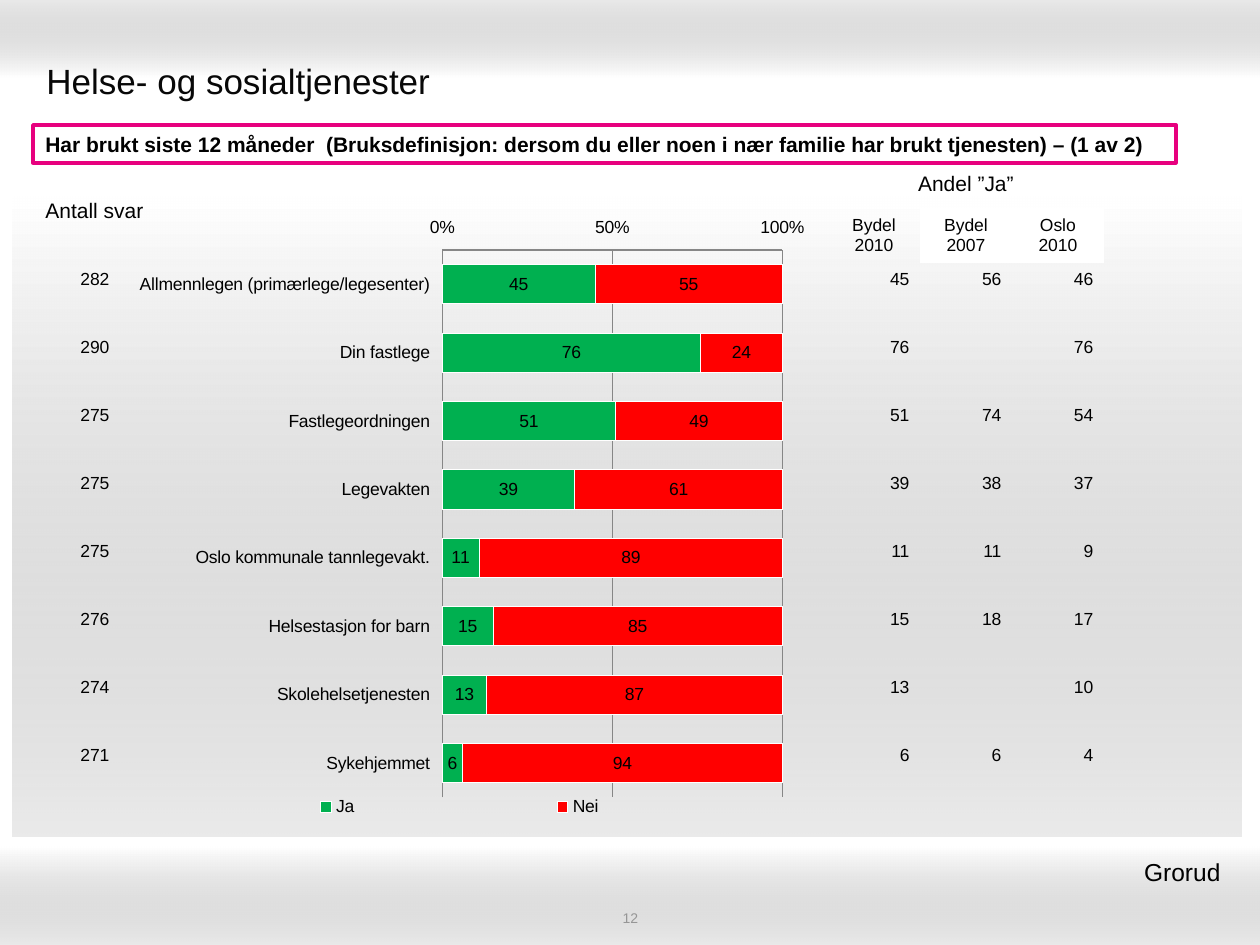
from lxml import etree
from pptx import Presentation
from pptx import util as u
from pptx.chart.data import CategoryChartData
from pptx.dml.color import RGBColor
from pptx.enum import chart as ch
from pptx.enum import shapes, text
from pptx.oxml import parse_xml
from pptx.oxml.ns import nsdecls, qn

PX_PER_INCH = 126
NO_TABLE_STYLE = "{2D5ABB26-0587-4C30-8999-92F81FD0307C}"
LEFT, CENTER, RIGHT = text.PP_ALIGN.LEFT, text.PP_ALIGN.CENTER, text.PP_ALIGN.RIGHT
TOP, MIDDLE = text.MSO_ANCHOR.TOP, text.MSO_ANCHOR.MIDDLE

# service, number of answers, yes, no, district 2007, Oslo 2010
SERVICES = [
    ("Allmennlegen (primærlege/legesenter)", 282, 45, 55, 56, 46),
    ("Din fastlege", 290, 76, 24, "", 76),
    ("Fastlegeordningen", 275, 51, 49, 74, 54),
    ("Legevakten", 275, 39, 61, 38, 37),
    ("Oslo kommunale tannlegevakt.", 275, 11, 89, 11, 9),
    ("Helsestasjon for barn", 276, 15, 85, 18, 17),
    ("Skolehelsetjenesten", 274, 13, 87, "", 10),
    ("Sykehjemmet", 271, 6, 94, 6, 4),
]


def px(n):
    return u.Emu(round(n * 914400 / PX_PER_INCH))


def rgb(value):
    return RGBColor.from_string(value)


def place_manually(element, x, y, w, h, inner=False):
    """Fix a chart part at fractions of the chart area."""
    target = '<c:layoutTarget val="inner"/>' if inner else ""
    sizes = "".join(f'<c:{tag} val="{val}"/>' for tag, val in zip("xywh", (x, y, w, h)))
    layout = parse_xml(
        f'<c:layout {nsdecls("c")}><c:manualLayout>{target}<c:xMode val="edge"/>'
        f'<c:yMode val="edge"/>{sizes}</c:manualLayout></c:layout>')
    old = element.find(qn("c:layout"))
    if old is not None:
        element.remove(old)
    position = 1 if element.find(qn("c:legendPos")) is not None else 0
    element.insert(position, layout)


class Deck:
    font, ink, grid = "Arial", "000000", "868686"

    def __init__(self, width, height):
        self.prs = Presentation()
        self.prs.slide_width, self.prs.slide_height = px(width), px(height)
        self.slide = self.prs.slides.add_slide(self.prs.slide_layouts[6])

    def style(self, font, size, color=None, bold=False):
        font.name, font.size, font.bold = self.font, u.Pt(size), bold
        font.color.rgb = rgb(color or self.ink)

    def set_text(self, tf, content, size, color=None, bold=False, align=LEFT):
        tf.text = str(content)
        for p in tf.paragraphs:
            p.alignment = align
            self.style(p.font, size, color, bold)

    def rect(self, x, y, w, h):
        sp = self.slide.shapes.add_shape(
            shapes.MSO_SHAPE.RECTANGLE, px(x), px(y), px(w), px(h))
        sp.shadow.inherit = False
        return sp

    def band(self, x, y, w, h, angle):
        """Rectangle fading from white to translucent grey."""
        sp = self.rect(x, y, w, h)
        sp.line.fill.background()
        sp.fill.gradient()
        sp.fill.gradient_angle = angle
        for stop, color, pos in zip(sp.fill.gradient_stops, ("FFFFFF", "999999"), (0, 1)):
            stop.color.rgb, stop.position = rgb(color), pos
        grey = sp._element.spPr.findall(".//" + qn("a:srgbClr"))[-1]
        etree.SubElement(grey, qn("a:alpha"), val="20000")

    def framed_text(self, x, y, w, h, content, size, line):
        sp = self.rect(x, y, w, h)
        sp.fill.solid()
        sp.fill.fore_color.rgb = rgb("FFFFFF")
        sp.line.color.rgb, sp.line.width = rgb(line), u.Pt(2)
        sp.text_frame.word_wrap = True
        sp.text_frame.vertical_anchor = TOP
        self.set_text(sp.text_frame, content, size, bold=True)

    def text(self, x, y, w, h, content, size, color=None, align=LEFT, anchor=MIDDLE):
        tf = self.slide.shapes.add_textbox(px(x), px(y), px(w), px(h)).text_frame
        tf.word_wrap, tf.vertical_anchor = True, anchor
        self.set_text(tf, content, size, color, align=align)

    def table(self, x, y, col_w, row_heights, rows, size=10, align=RIGHT):
        cols = len(rows[0])
        tbl = self.slide.shapes.add_table(
            len(rows), cols, px(x), px(y), px(col_w * cols), px(sum(row_heights))).table
        tbl.first_row = tbl.horz_banding = False
        tbl._tbl.tblPr.find(qn("a:tableStyleId")).text = NO_TABLE_STYLE
        for col in tbl.columns:
            col.width = px(col_w)
        for row, height, values in zip(tbl.rows, row_heights, rows):
            row.height = px(height)
            for cell, value in zip(row.cells, values):
                cell.fill.background()
                cell.vertical_anchor = MIDDLE
                self.set_text(cell.text_frame, value, size, align=align)
        return tbl

    def stacked_bars(self, x, y, w, h, categories, series):
        """series: (name, values, colour) triples."""
        data = CategoryChartData()
        data.categories = categories
        for name, values, _ in series:
            data.add_series(name, values)
        chart = self.slide.shapes.add_chart(
            ch.XL_CHART_TYPE.BAR_STACKED, px(x), px(y), px(w), px(h), data).chart
        self.style(chart.font, 10)
        chart.has_title = False

        plot = chart.plots[0]
        plot.gap_width, plot.overlap, plot.vary_by_categories = 75, 100, False
        for ser, (_, _, color) in zip(plot.series, series):
            ser.format.fill.solid()
            ser.format.fill.fore_color.rgb = rgb(color)
            ser.format.line.color.rgb = rgb("FFFFFF")
            labels = ser.data_labels
            labels.show_value = True
            labels.number_format, labels.number_format_is_linked = "0", False
            labels.position = ch.XL_LABEL_POSITION.CENTER
            self.style(labels.font, 10)

        cat, val = chart.category_axis, chart.value_axis
        cat.reverse_order = True
        cat.major_tick_mark = ch.XL_TICK_MARK.NONE
        cat.format.line.color.rgb = rgb(self.grid)
        val.minimum_scale, val.maximum_scale, val.major_unit = 0, 100, 50
        val.major_tick_mark = ch.XL_TICK_MARK.INSIDE
        val.tick_labels.number_format = "General\\%"
        val.tick_labels.number_format_is_linked = False
        val.has_major_gridlines = True
        for line in (val.format.line, val.major_gridlines.format.line):
            line.color.rgb = rgb(self.grid)
        for axis in (cat, val):
            axis.tick_label_position = ch.XL_TICK_LABEL_POSITION.LOW

        chart.has_legend = True
        chart.legend.position = ch.XL_LEGEND_POSITION.BOTTOM
        chart.legend.include_in_layout = False
        plot_area = chart._chartSpace.chart.plotArea
        place_manually(plot_area, 0.46, 0.07, 0.49, 0.85, inner=True)
        place_manually(chart.legend._element, 0, 0.91, 0.97, 0.05)


def main():
    names, answers, yes, no, before, city = zip(*SERVICES)
    row_heights = [68] * len(SERVICES)
    deck = Deck(1260, 945)

    deck.band(0, 0, 1260, 78, angle=90)
    deck.band(0, 847, 1260, 98, angle=270)
    deck.band(13, 197, 1228, 640, angle=270)

    deck.text(34, 46, 1190, 70, "Helse- og sosialtjenester", 20, "080808")
    deck.text(431, 909, 399, 18, "12", 8, "969696", CENTER)
    deck.framed_text(
        33, 125, 1143, 38,
        "Har brukt siste 12 måneder  (Bruksdefinisjon: dersom du eller noen i "
        "nær familie har brukt tjenesten) – (1 av 2)", 12, "E7007E")

    deck.stacked_bars(123, 205, 694, 644, names,
                      [("Ja", yes, "00B050"), ("Nei", no, "FF0000")])

    deck.table(830, 246, 92, row_heights, list(zip(yes, before, city)))
    header = deck.table(
        828, 160, 92, [48, 53],
        [("", "", ""), ("Bydel\n2010", "Bydel\n2007", "Oslo\n2010")], align=CENTER)
    header.cell(0, 0).merge(header.cell(0, 2))
    deck.set_text(header.cell(0, 0).text_frame, "Andel ”Ja”", 12, align=CENTER)
    for col in (1, 2):
        fill = header.cell(1, col).fill
        fill.solid()
        fill.fore_color.rgb = rgb("FFFFFF")

    deck.table(5, 174, 179, [74], [("Antall svar",)], size=12, align=CENTER)
    deck.text(769, 851, 464, 43, "Grorud", 14, align=RIGHT, anchor=TOP)
    deck.table(33, 246, 89, row_heights, [(n,) for n in answers])
    deck.prs.save("out.pptx")


if __name__ == "__main__":
    main()
